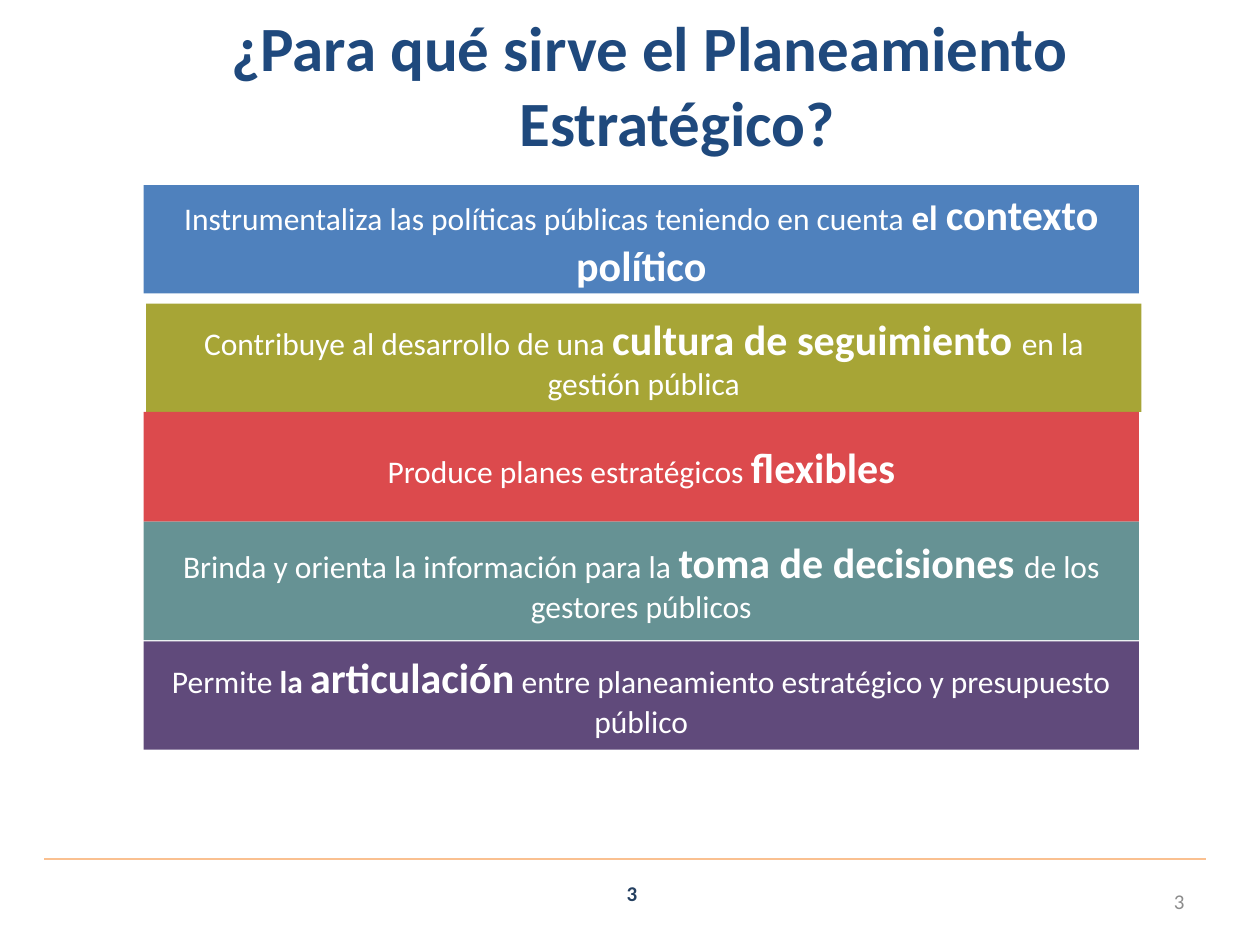
from pptx import Presentation, util as u
from pptx.dml.color import RGBColor
from pptx.enum import shapes, text
from pptx.oxml.ns import qn
from lxml import etree

CENTER, RIGHT = text.PP_ALIGN.CENTER, text.PP_ALIGN.RIGHT
BARS = [
    (0, 0, 0.86, "4F81BD", [
        ("Instrumentaliza las políticas públicas teniendo en cuenta ", 18, False),
        ("el ", 20, True), ("contexto político", 24, True)]),
    (0.02, 0.94, 0.86, "A7A536", [
        ("Contribuye al desarrollo de una ", 18, False),
        ("cultura de seguimiento ", 24, True),
        ("en la gestión pública", 18, False)]),
    (0, 1.8, 0.87, "DC4A4D", [
        ("Produce planes estratégicos ", 18, False), ("flexibles", 24, True)]),
    (0, 2.67, 0.94, "669294", [
        ("Brinda y orienta la información para la ", 18, False),
        ("toma de decisiones ", 24, True),
        ("de los gestores públicos", 18, False)]),
    (0, 3.62, 0.86, "604A7B", [
        ("Permite ", 18, False), ("la ", 18, True), ("articulación", 24, True),
        (" ", 18, True),
        ("entre planeamiento estratégico y presupuesto público", 18, False)]),
]


def rgb(color):
    """Return the colour for a hex string."""
    return RGBColor.from_string(color)


def write(sp, runs, color, align=CENTER):
    """Fill a shape with one paragraph of (text, size, bold) runs."""
    tf = sp.text_frame
    tf.word_wrap = True
    tf.vertical_anchor = text.MSO_ANCHOR.MIDDLE
    p = tf.paragraphs[0]
    p.alignment = align
    for words, size, bold in runs:
        r = p.add_run()
        r.text = words
        font = {"name": "Calibri", "size": u.Pt(size), "bold": bold}
        for key, value in font.items():
            setattr(r.font, key, value)
        r.font.color.rgb = rgb(color)
    return p


def add_text(s, box, runs, color, align=CENTER):
    """Add a text box and return its paragraph."""
    sp = s.shapes.add_textbox(*map(u.Inches, box))
    return write(sp, runs, color, align)


def add_title(s, box):
    """Add the title with its hanging indent."""
    title = "¿Para qué sirve el Planeamiento Estratégico?"
    p = add_text(s, box, [(title, 36, True)], "1F497D")
    p.space_before = u.Pt(7.2)
    indent = u.Inches(0.44)
    for key, value in {"marL": indent, "indent": -indent}.items():
        p._p.get_or_add_pPr().set(key, str(int(value)))


def add_bars(s, left, top, width):
    """Stack the coloured statement bars."""
    for dx, dy, height, fill, runs in BARS:
        box = map(u.Inches, (left + dx, top + dy, width, height))
        sp = s.shapes.add_shape(shapes.MSO_SHAPE.RECTANGLE, *box)
        sp.shadow.inherit = False
        sp.fill.solid()
        sp.fill.fore_color.rgb = rgb(fill)
        sp.line.fill.background()
        write(sp, runs, "FFFFFF")


def add_footer(s, left, top, width):
    """Add the rule and both page numbers."""
    ends = map(u.Inches, (left, top, left + width, top))
    line = s.shapes.add_connector(shapes.MSO_CONNECTOR.STRAIGHT, *ends)
    line.line.color.rgb = rgb("FAC090")
    line.line.width = u.Pt(1.25)
    etree.SubElement(line._element.spPr, qn("a:effectLst"))
    add_text(s, (left + 3.5, top + 0.07, 2.33, 0.4), [("3", 12, True)], "254061")
    add_text(s, (left + 6.82, top + 0.13, 2.33, 0.4), [("3", 12, False)],
             "8C8C8C", RIGHT)


def main():
    """Build the slide and save it."""
    prs = Presentation()
    prs.slide_width, prs.slide_height = u.Inches(10), u.Inches(7.5)
    s = prs.slides.add_slide(prs.slide_layouts[6])
    add_footer(s, 0.35, 6.82, 9.22)
    add_title(s, (1.14, 0.23, 8.03, 0.87))
    add_bars(s, 1.14, 1.47, 7.9)
    prs.save("out.pptx")


if __name__ == "__main__":
    main()
